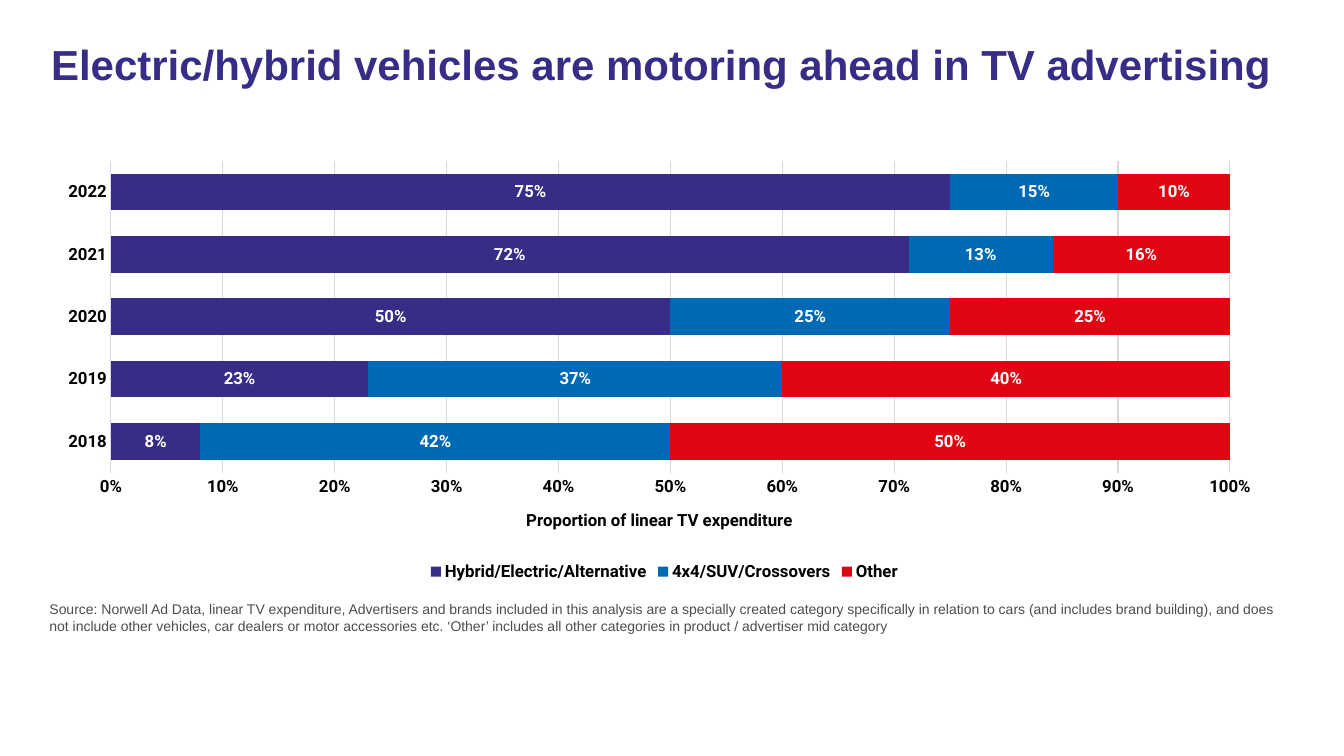
from lxml.etree import SubElement
from pptx import Presentation
from pptx.chart.data import CategoryChartData
from pptx.dml.color import RGBColor
from pptx.enum.chart import (XL_CHART_TYPE, XL_LABEL_POSITION,
                             XL_LEGEND_POSITION, XL_TICK_MARK)
from pptx.enum.text import MSO_ANCHOR, MSO_AUTO_SIZE, PP_ALIGN
from pptx.oxml.ns import qn
from pptx.util import Inches, Pt

SLIDE_WIDTH, SLIDE_HEIGHT = Inches(13.33), Inches(7.5)

INDIGO = RGBColor(0x37, 0x2D, 0x87)
BLUE = RGBColor(0x00, 0x69, 0xB4)
RED = RGBColor(0xE1, 0x05, 0x14)
BLACK = RGBColor(0x00, 0x00, 0x00)
WHITE = RGBColor(0xFF, 0xFF, 0xFF)
DARK_GREY = RGBColor(0x4D, 0x4D, 0x4D)
LIGHT_GREY = RGBColor(0xD9, 0xD9, 0xD9)

# Left, top, width, height in percent of the slide
TITLE_AREA = (3.05, 5.2, 93, 14.93)
CHART_AREA = (3.68, 20.13, 91.5, 57.33)
SOURCE_AREA = (2.93, 78.8, 93, 4.4)
# Shares of the chart
BARS_AREA = {"x": 0.05, "y": 0.02, "w": 0.91, "h": 0.72}

HEADLINE = "Electric/hybrid vehicles are motoring ahead in TV advertising"
SOURCE_NOTE = (
    "Source: Norwell Ad Data, linear TV expenditure, Advertisers and brands "
    "included in this analysis are a specially created category specifically in "
    "relation to cars (and includes brand building), and does not include other "
    "vehicles, car dealers or motor accessories etc. ‘Other’ includes all other "
    "categories in product / advertiser mid category"
)
YEARS = ["2018", "2019", "2020", "2021", "2022"]
SPENDING = [
    ("Hybrid/Electric/Alternative", INDIGO, (0.08, 0.23, 0.5, 0.72, 0.75)),
    ("4x4/SUV/Crossovers", BLUE, (0.42, 0.37, 0.25, 0.13, 0.15)),
    ("Other", RED, (0.5, 0.4, 0.25, 0.16, 0.1)),
]


def place(area):
    """Turn percentages of the slide into lengths."""
    sides = (SLIDE_WIDTH, SLIDE_HEIGHT) * 2
    return [int(side * share / 100) for side, share in zip(sides, area)]


def style_font(font, size, color, name, bold):
    font.size, font.name, font.bold = Pt(size), name, bold
    font.color.rgb = color


def style_chart_font(font, color=BLACK):
    style_font(font, 12, color, "Roboto", True)


def fill_placeholder(holder, area, text, size, color, bold, line_spacing=1.0):
    holder.left, holder.top, holder.width, holder.height = place(area)
    frame = holder.text_frame
    frame.text = text
    frame.word_wrap = True
    frame.auto_size = MSO_AUTO_SIZE.NONE
    frame.vertical_anchor = MSO_ANCHOR.TOP
    paragraph = frame.paragraphs[0]
    paragraph.alignment = PP_ALIGN.LEFT
    paragraph.line_spacing = line_spacing
    paragraph.space_before = Pt(0)
    # No bullet and no hanging indent
    properties = paragraph._p.get_or_add_pPr()
    properties.set("marL", "0")
    properties.set("indent", "0")
    SubElement(properties, qn("a:buNone"))
    style_font(paragraph.font, size, color, "Arial", bold)


def set_bars_area(chart):
    plot_area = chart.element.chart.plotArea
    for old_layout in plot_area.findall(qn("c:layout")):
        plot_area.remove(old_layout)
    layout = SubElement(plot_area, qn("c:layout"))
    plot_area.insert(0, layout)
    manual = SubElement(layout, qn("c:manualLayout"))
    settings = {"layoutTarget": "inner", "xMode": "edge", "yMode": "edge", **BARS_AREA}
    for tag, value in settings.items():
        SubElement(manual, qn(f"c:{tag}")).set("val", str(value))


def style_axes(chart):
    years, shares = chart.category_axis, chart.value_axis
    for axis in (years, shares):
        axis.major_tick_mark = axis.minor_tick_mark = XL_TICK_MARK.NONE
        style_chart_font(axis.tick_labels.font)
    shares.format.line.fill.background()
    shares.has_major_gridlines = True
    for line in (years.format.line, shares.major_gridlines.format.line):
        line.color.rgb = LIGHT_GREY
        line.width = Pt(0.75)
    shares.major_unit = 0.1
    shares.tick_labels.number_format = "0%"
    shares.tick_labels.number_format_is_linked = False
    caption = shares.axis_title.text_frame
    caption.text = "Proportion of linear TV expenditure"
    style_chart_font(caption.paragraphs[0].font)


def style_series(series, color):
    series.format.fill.solid()
    series.format.fill.fore_color.rgb = color
    labels = series.data_labels
    labels.show_value = True
    labels.position = XL_LABEL_POSITION.CENTER
    labels.number_format = "0%"
    labels.number_format_is_linked = False
    style_chart_font(labels.font, WHITE)


def add_spending_chart(slide):
    spending = CategoryChartData(number_format="0%")
    spending.categories = YEARS
    for name, _, values in SPENDING:
        spending.add_series(name, values)
    chart = slide.shapes.add_chart(
        XL_CHART_TYPE.BAR_STACKED_100, *place(CHART_AREA), spending).chart
    chart.has_title = False
    style_chart_font(chart.font)
    bars = chart.plots[0]
    bars.gap_width, bars.overlap = 70, 100
    bars.vary_by_categories = False
    for series, (_, color, _) in zip(bars.series, SPENDING):
        style_series(series, color)
    style_axes(chart)
    set_bars_area(chart)
    chart.has_legend = True
    chart.legend.position = XL_LEGEND_POSITION.BOTTOM
    chart.legend.include_in_layout = False
    style_chart_font(chart.legend.font)


def main():
    deck = Presentation()
    deck.slide_width, deck.slide_height = SLIDE_WIDTH, SLIDE_HEIGHT
    slide = deck.slides.add_slide(deck.slide_layouts[1])
    headline, source = slide.placeholders

    # Headline and source note
    fill_placeholder(headline, TITLE_AREA, HEADLINE, 30, INDIGO, True, 0.9)
    fill_placeholder(source, SOURCE_AREA, SOURCE_NOTE, 10, DARK_GREY, False)

    # Share of spending by vehicle type
    add_spending_chart(slide)
    deck.save("out.pptx")


if __name__ == "__main__":
    main()
